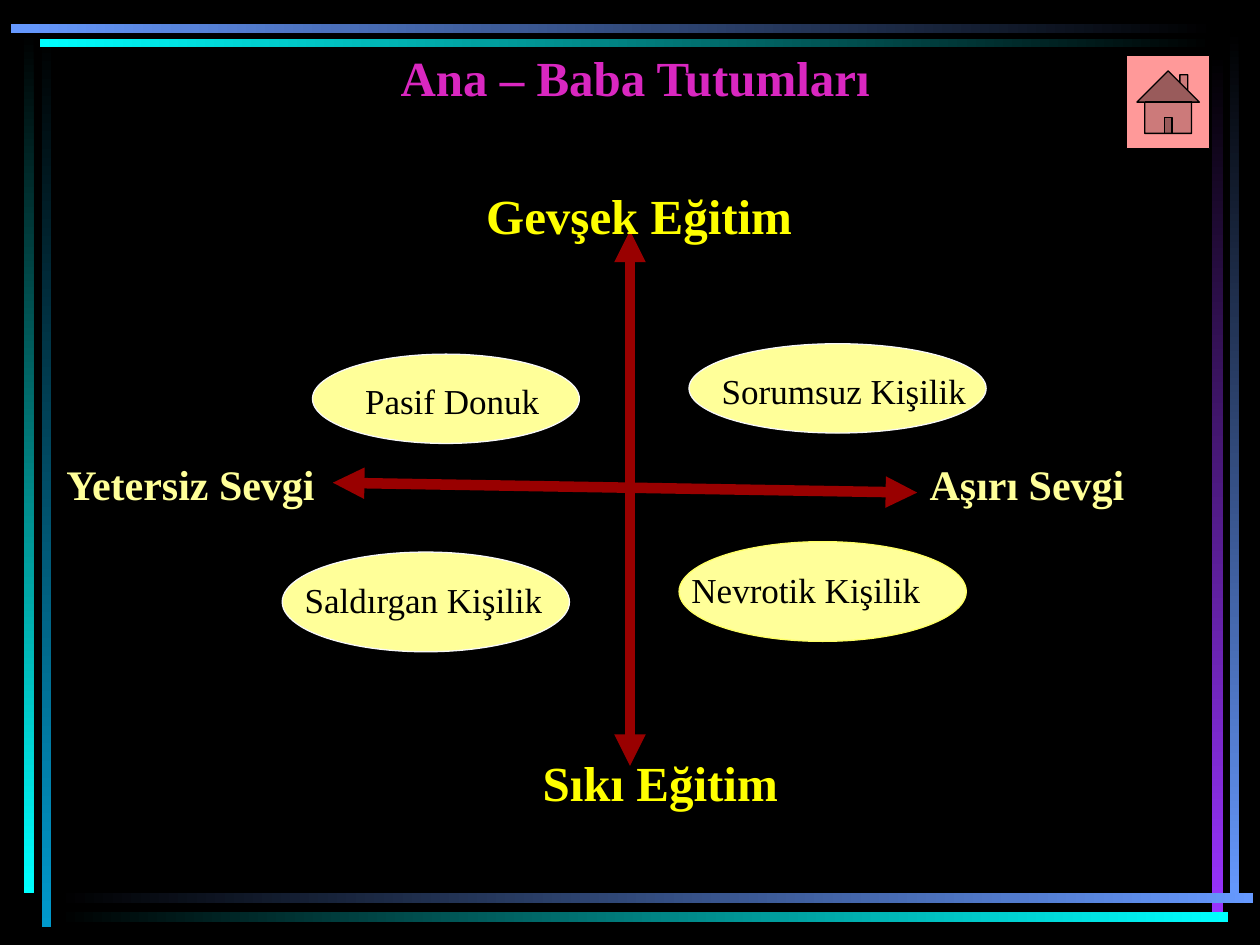
"""Build a slide that maps parenting styles on two axes."""
import pptx
import pptx.util
import pptx.dml.color
import pptx.enum.shapes
import pptx.enum.text
import pptx.oxml.xmlchemy

Cm, Pt = pptx.util.Cm, pptx.util.Pt
Kind = pptx.enum.shapes.MSO_SHAPE
Align = pptx.enum.text.PP_ALIGN
Node = pptx.oxml.xmlchemy.OxmlElement


def tint(code):
    return pptx.dml.color.RGBColor.from_string(code)


def draw(kind, box, fill=None, edge=None):
    shape = slide.shapes.add_shape(kind, *map(Cm, box))
    shape.shadow.inherit = False
    if fill:
        shape.fill.solid()
        shape.fill.fore_color.rgb = tint(fill)
    if edge:
        shape.line.color.rgb = tint(edge)
        shape.line.width = Pt(0.75)
    else:
        shape.line.fill.background()
    return shape


deck = pptx.Presentation()
deck.slide_width, deck.slide_height = Cm(25.4), Cm(19.05)
slide = deck.slides.add_slide(deck.slide_layouts[6])
slide.background.fill.solid()
slide.background.fill.fore_color.rgb = tint("000000")

bars = [
    ((0.84, 0.71, 0.2, 17.98), "000000", "0099CC"),
    ((0.48, 0.64, 0.2, 17.37), "000000", "00FFFF"),
    ((24.79, 0.61, 0.18, 17.6), "000000", "6699FF"),
    ((24.43, 1.07, 0.23, 17.35), "000000", "9933FF"),
    ((1.14, 18.01, 24.13, 0.2), "000000", "6699FF"),
    ((1.14, 18.39, 23.62, 0.2), "000000", "00FFFF"),
    ((0.81, 0.79, 23.67, 0.15), "00FFFF", "000000"),
    ((0.22, 0.48, 24.28, 0.18), "6699FF", "000000"),
]
for box, start, end in bars:
    fill = draw(Kind.RECTANGLE, box).fill
    fill.gradient()
    fill.gradient_angle = 270 if box[3] > box[2] else 0
    for stop, code in zip(fill.gradient_stops, (start, end)):
        stop.color.rgb = tint(code)

ovals = [
    ((13.89, 6.93, 5.99, 1.8), "F8F8F8"),
    ((13.69, 10.92, 5.79, 2.01), "FFFF66"),
    ((6.3, 7.14, 5.38, 1.8), "F8F8F8"),
    ((5.69, 11.13, 5.79, 2.01), "F8F8F8"),
]
for box, edge in ovals:
    draw(Kind.OVAL, box, "FFFF99", edge)

for ends in [(12.7, 4.65, 12.7, 15.44), (6.71, 9.73, 18.49, 9.93)]:
    axis = slide.shapes.add_connector(
        pptx.enum.shapes.MSO_CONNECTOR.STRAIGHT, *map(Cm, ends))
    axis.line.color.rgb = tint("990000")
    axis.line.width = Pt(6)
    props = axis._element.spPr
    for tag in ("a:headEnd", "a:tailEnd"):
        tip = Node(tag)
        tip.set("type", "triangle")
        props.ln.append(tip)
    props.append(Node("a:effectLst"))

labels = [
    ("Gevşek Eğitim", (8.26, 3.61, 9.25, 1.45), 28, "FFFF00", True, Align.CENTER),
    ("Sıkı Eğitim", (10.69, 15.04, 7.92, 1.45), 28, "FFFF00", True, Align.LEFT),
    ("Aşırı Sevgi", (18.49, 9.12, 5.41, 1.27), 24, "FFFF99", True, Align.LEFT),
    ("Yetersiz Sevgi", (1.09, 9.12, 6.2, 1.27), 24, "FFFF99", True, Align.LEFT),
    ("Ana – Baba Tutumları", (0.74, 0.84, 24.13, 1.45), 28, "D927C0", True, Align.CENTER),
    ("Sorumsuz Kişilik", (14.3, 7.32, 7.59, 1.09), 20, "000000", False, Align.LEFT),
    ("Nevrotik Kişilik", (13.69, 11.33, 5.99, 1.09), 20, "000000", False, Align.LEFT),
    ("Pasif Donuk", (7.11, 7.52, 4.8, 1.09), 20, "000000", False, Align.LEFT),
    ("Saldırgan Kişilik", (5.89, 11.53, 5.79, 1.09), 20, "000000", False, Align.LEFT),
]
for text, box, size, code, bold, align in labels:
    frame = slide.shapes.add_textbox(*map(Cm, box)).text_frame
    frame.word_wrap = True
    para = frame.paragraphs[0]
    para.alignment = align
    run = para.add_run()
    run.text = text
    font = run.font
    font.name, font.size, font.bold = "Times New Roman", Pt(size), bold
    font.color.rgb = tint(code)

draw(Kind.ACTION_BUTTON_HOME, (22.71, 1.12, 1.68, 1.88), "FF9999", "000000")

deck.save("out.pptx")
